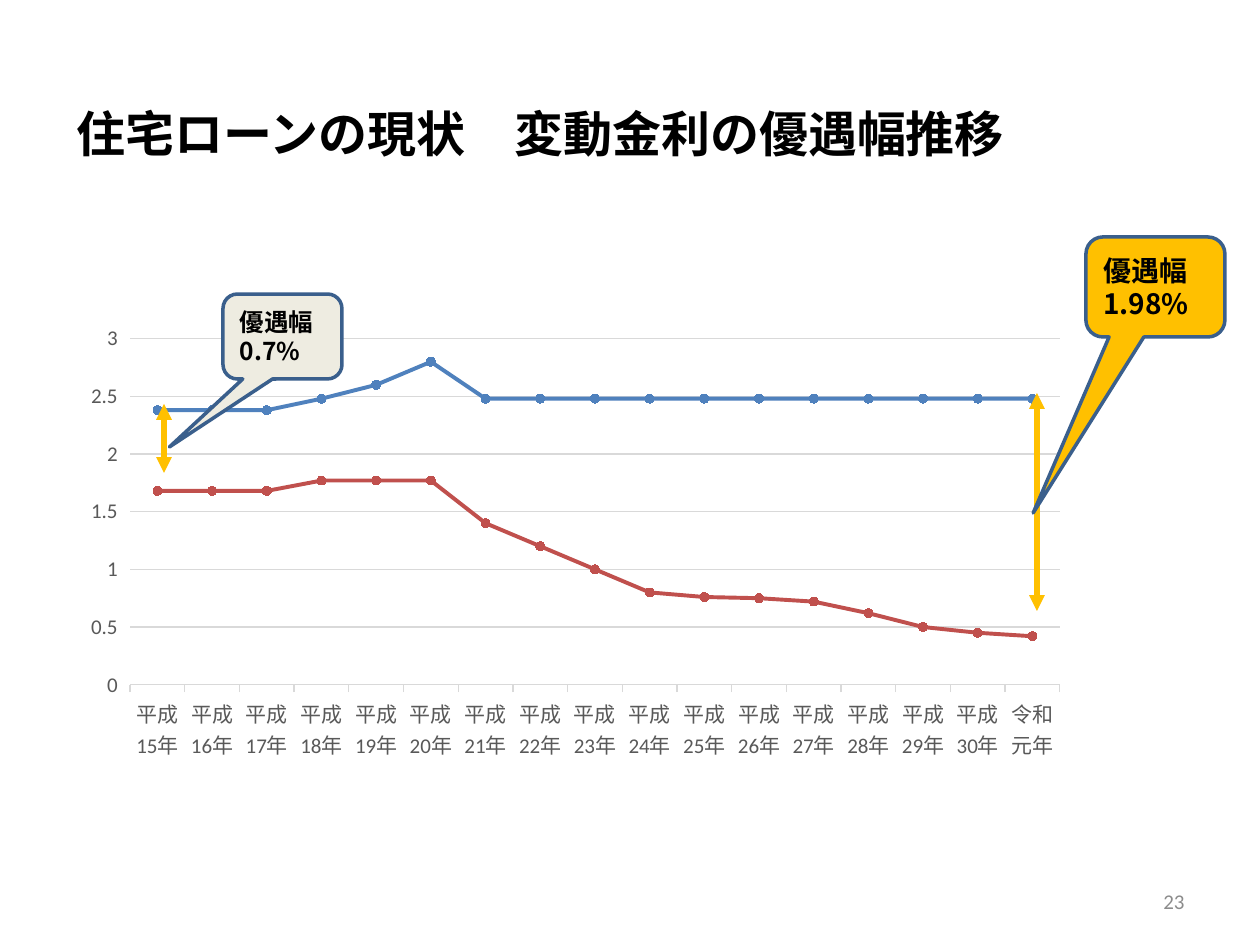
import pptx
import pptx.chart.data
import pptx.dml.color
import pptx.enum.chart
import pptx.enum.shapes
import pptx.enum.text
import pptx.oxml
import pptx.oxml.ns
import pptx.util
from lxml import etree

TITLE = "住宅ローンの現状　変動金利の優遇幅推移"
PAGE = "23"
YEARS = [f"平成{n}年" for n in range(15, 31)] + ["令和元年"]
SERIES = [
    ("Series 1", "blue", [2.38, 2.38, 2.38, 2.48, 2.6, 2.8] + [2.48] * 11),
    ("Series 2", "red", [1.68, 1.68, 1.68, 1.77, 1.77, 1.77, 1.4, 1.2, 1, 0.8,
                         0.76, 0.75, 0.72, 0.62, 0.5, 0.45, 0.42]),
]
# x, top, bottom
ARROWS = [(1037, 393, 611), (164, 404, 473)]
# lines, box, adjustments, fill, text size
CALLOUTS = [
    (["優遇幅", "1.98%"], (1086, 237, 139, 100), (-0.88, 2.26, 0.17), "amber", 16),
    (["優遇幅", "0.7%"], (223, 294, 119, 85), (-0.95, 1.3, 0.17), "cream", 14),
]
PLOT = {"x": 0.046, "y": 0.279, "w": 0.928, "h": 0.572}
COLORS = {
    "black": "000000", "blue": "4F81BD", "red": "C0504D", "amber": "FFC000",
    "cream": "EEECE1", "outline": "3A5F8C", "grid": "D9D9D9",
    "label": "595959", "page": "8C8C8C",
}
LATIN, CJK = "Calibri", "Noto Sans CJK JP"
Pt = pptx.util.Pt
qn = pptx.oxml.ns.qn


def px(*values):
    return [round(v * 914400 / 126) for v in values]


def rgb(name):
    return pptx.dml.color.RGBColor.from_string(COLORS[name])


def style_line(line, color, width):
    line.color.rgb = rgb(color)
    line.width = Pt(width)


def style_font(font, size, color, name, bold=False):
    font.size, font.name, font.bold = Pt(size), name, bold
    font.color.rgb = rgb(color)


def write(tf, lines, size, color, name, bold=False, align="LEFT"):
    """Fill a text frame, one paragraph a line, with one font for all scripts."""
    tf.word_wrap = True
    tf.vertical_anchor = pptx.enum.text.MSO_ANCHOR.MIDDLE
    tf.text = "\n".join(lines)
    for p in tf.paragraphs:
        p.alignment = getattr(pptx.enum.text.PP_ALIGN, align)
        style_font(p.font, size, color, name, bold)
        latin = p._p.pPr.find(qn("a:defRPr")).find(qn("a:latin"))
        ea = etree.Element(qn("a:ea"), typeface=name)
        latin.addnext(ea)


def add_rate_chart(s):
    data = pptx.chart.data.CategoryChartData()
    data.categories = YEARS
    for name, _, values in SERIES:
        data.add_series(name, values)
    kind = pptx.enum.chart.XL_CHART_TYPE.LINE_MARKERS
    chart = s.shapes.add_chart(kind, *px(84, 170, 1002, 605), data).chart
    chart.has_legend = chart.has_title = False
    style_font(chart.font, 10, "black", LATIN)
    for axis in (chart.category_axis, chart.value_axis):
        style_font(axis.tick_labels.font, 12, "label", LATIN)
    style_line(chart.category_axis.format.line, "grid", 0.75)
    value_axis = chart.value_axis
    value_axis.minimum_scale, value_axis.maximum_scale = 0, 3
    value_axis.major_unit = 0.5
    value_axis.format.line.fill.background()
    style_line(value_axis.major_gridlines.format.line, "grid", 0.75)
    for series, (_, color, _) in zip(chart.plots[0].series, SERIES):
        series.smooth = False
        style_line(series.format.line, color, 2.25)
        marker = series.marker
        marker.style = pptx.enum.chart.XL_MARKER_STYLE.CIRCLE
        marker.size = 5
        marker.format.fill.solid()
        marker.format.fill.fore_color.rgb = rgb(color)
        marker.format.line.color.rgb = rgb(color)
    set_plot_layout(chart)


def set_plot_layout(chart):
    area = chart._chartSpace.chart.plotArea
    for old in area.findall(qn("c:layout")):
        area.remove(old)
    layout = etree.Element(qn("c:layout"))
    manual = etree.SubElement(layout, qn("c:manualLayout"))
    settings = {"layoutTarget": "inner", "xMode": "edge", "yMode": "edge", **PLOT}
    for tag, value in settings.items():
        etree.SubElement(manual, qn(f"c:{tag}"), val=str(value))
    area.insert(0, layout)


def add_arrow(s, x, top, bottom):
    kind = pptx.enum.shapes.MSO_CONNECTOR.STRAIGHT
    arrow = s.shapes.add_connector(kind, *px(x, top, x, bottom))
    style_line(arrow.line, "amber", 3)
    ln = arrow.line._get_or_add_ln()
    for end in ("headEnd", "tailEnd"):
        etree.SubElement(ln, qn(f"a:{end}"), type="triangle")
    etree.SubElement(arrow._element.spPr, qn("a:effectLst"))


def add_callout(s, lines, box, adjustments, fill, size):
    kind = pptx.enum.shapes.MSO_SHAPE.ROUNDED_RECTANGULAR_CALLOUT
    sp = s.shapes.add_shape(kind, *px(*box))
    for i, value in enumerate(adjustments):
        sp.adjustments[i] = value
    sp.shadow.inherit = False
    sp.fill.solid()
    sp.fill.fore_color.rgb = rgb(fill)
    style_line(sp.line, "outline", 2)
    write(sp.text_frame, lines, size, "black", CJK, bold=True)


def main():
    prs = pptx.Presentation()
    prs.slide_width, prs.slide_height = px(1260, 945)
    s = prs.slides.add_slide(prs.slide_layouts[5])

    title = s.shapes.title
    title.left, title.top, title.width, title.height = px(64, 97, 992, 72)
    write(title.text_frame, [TITLE], 28, "black", CJK, bold=True)

    add_rate_chart(s)
    for arrow in ARROWS:
        add_arrow(s, *arrow)
    for callout in CALLOUTS:
        add_callout(s, *callout)

    page = s.shapes.add_textbox(*px(903, 876, 294, 50))
    write(page.text_frame, [PAGE], 12, "page", LATIN, align="RIGHT")
    prs.save("out.pptx")


if __name__ == "__main__":
    main()
